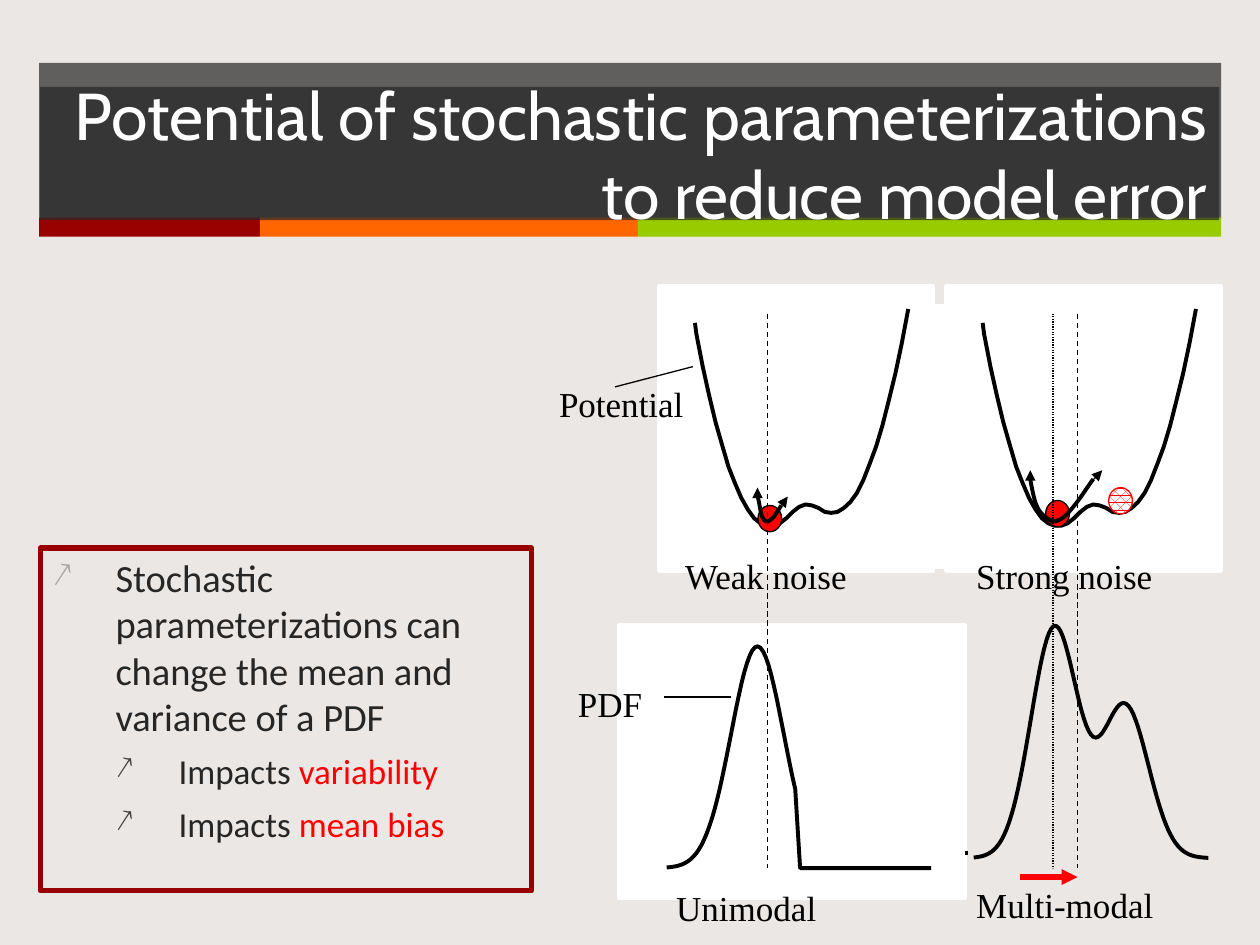
from dataclasses import dataclass
from math import exp

from lxml import etree
from pptx import Presentation
from pptx.dml.color import RGBColor
from pptx.enum.dml import MSO_LINE, MSO_PATTERN
from pptx.enum.shapes import MSO_CONNECTOR, MSO_SHAPE
from pptx.enum.text import MSO_ANCHOR, PP_ALIGN
from pptx.oxml.ns import qn
from pptx.util import Cm, Pt

RECT, OVAL = MSO_SHAPE.RECTANGLE, MSO_SHAPE.OVAL
STRAIGHT = MSO_CONNECTOR.STRAIGHT
DASH, DOTS = MSO_LINE.DASH, MSO_LINE.ROUND_DOT
DOT_FILL = MSO_PATTERN.PERCENT_60
TOP, MIDDLE = MSO_ANCHOR.TOP, MSO_ANCHOR.MIDDLE
LEFT, RIGHT = PP_ALIGN.LEFT, PP_ALIGN.RIGHT


@dataclass(frozen=True)
class Theme:
    paper: str = "EAE7E4"
    dark: str = "262626"
    white: str = "FFFFFF"
    black: str = "000000"
    maroon: str = "990000"
    orange: str = "FF6600"
    green: str = "99CC00"
    red: str = "FF0000"
    bullets: tuple = ("A6A6A6", "404040")
    title_font: str = "Cabin"
    body_font: str = "Calibri"
    label_font: str = "Times New Roman"
    title_size: float = 37.8
    body_sizes: tuple = (22, 20)
    label_size: float = 20
    curve_width: float = 2.25


THEME = Theme()

# Depth in cm below the top of the double-well curve, at equal steps
WELL_DEPTHS = [
    0.51, 1.17, 1.75, 2.29, 2.74, 3.18, 3.51, 3.81, 4.04, 4.22, 4.32, 4.37,
    4.37, 4.32, 4.22, 4.09, 3.99, 3.94, 3.96, 4.01, 4.09, 4.11, 4.09, 4.01,
    3.89, 3.71, 3.45, 3.12, 2.77, 2.34, 1.83, 1.30, 0.69, 0,
]
# Cubic control points and final arrow, in cm from the bottom of the well
WEAK_SWINGS = [
    ([(0, 0), (.03, 0), (.08, -.03), (.13, -.08),
      (.18, -.13), (.28, -.3), (.3, -.33)], [(.3, -.33), (.43, -.51)], .75),
    ([(0, 0), (-.05, -.03), (-.08, -.08), (-.1, -.15),
      (-.13, -.25), (-.15, -.46), (-.18, -.51)], [(-.18, -.51), (-.18, -.69)], 1),
]
STRONG_SWINGS = [
    ([(0, 0), (.08, -.03), (.18, -.05), (.3, -.2),
      (.46, -.36), (.71, -.76), (.79, -.86)], [(.64, -.69), (.97, -1.04)], .75),
    ([(0, 0), (-.13, -.05), (-.25, -.13), (-.33, -.28),
      (-.41, -.43), (-.46, -.76), (-.48, -.86)], [(-.48, -.79), (-.48, -1.04)], 1),
]


def rgb(color):
    return RGBColor.from_string(color)


def add_block(slide, box, fill=None, line=None, width=.75, kind=RECT, alpha=None):
    block = slide.shapes.add_shape(kind, *map(Cm, box))
    block.shadow.inherit = False
    if fill:
        block.fill.solid()
        block.fill.fore_color.rgb = rgb(fill)
    else:
        block.fill.background()
    if alpha:
        color = block._element.spPr.find(".//" + qn("a:srgbClr"))
        etree.SubElement(color, qn("a:alpha")).set("val", str(alpha * 1000))
    if line:
        block.line.color.rgb = rgb(line)
        block.line.width = Pt(width)
    else:
        block.line.fill.background()
    return block


def add_line(slide, start, end, color=THEME.black, width=.75, dash=None, arrow=False):
    line = slide.shapes.add_connector(STRAIGHT, *map(Cm, (*start, *end)))
    line.line.color.rgb = rgb(color)
    line.line.width = Pt(width)
    if dash:
        line.line.dash_style = dash
    if arrow:
        etree.SubElement(line.line._get_or_add_ln(), qn("a:tailEnd")).set("type", "triangle")
    etree.SubElement(line._element.spPr, qn("a:effectLst"))


def add_curve(slide, points):
    corners = [(Cm(x), Cm(y)) for x, y in points]
    builder = slide.shapes.build_freeform(*corners[0], scale=1.0)
    builder.add_line_segments(corners[1:], close=False)
    curve = builder.convert_to_shape()
    curve.shadow.inherit = False
    curve.fill.background()
    curve.line.color.rgb = rgb(THEME.black)
    curve.line.width = Pt(THEME.curve_width)


def style_run(run, font, size, color):
    run.font.name, run.font.size = font, Pt(size)
    run.font.color.rgb = rgb(color)


def add_label(slide, text, x, y, width):
    frame = slide.shapes.add_textbox(Cm(x), Cm(y), Cm(width), Cm(1.12)).text_frame
    frame.word_wrap = True
    frame.text = text
    style_run(frame.paragraphs[0].runs[0], THEME.label_font, THEME.label_size, THEME.black)


def cubic_points(controls, steps=8):
    """Sample a chain of cubic curves that share their end points."""
    points = [controls[0]]
    for first in range(0, len(controls) - 1, 3):
        quad = controls[first:first + 4]
        for step in range(1, steps + 1):
            t = step / steps
            weights = ((1 - t) ** 3, 3 * t * (1 - t) ** 2, 3 * t * t * (1 - t), t ** 3)
            points.append(tuple(sum(w * p[axis] for w, p in zip(weights, quad))
                                for axis in (0, 1)))
    return points


def bell(x, mean, height, spread):
    return height * exp(-((x - mean) / spread) ** 2 / 2)


def title_band(slide, x, y, width):
    add_block(slide, (x, y, width, 3.15), THEME.dark, alpha=70)
    left = x
    for color, part in ((THEME.maroon, 4.45), (THEME.orange, 7.62), (THEME.green, 11.76)):
        add_block(slide, (left, y + 3.12, part, .38), color)
        left += part
    title = add_block(slide, (x + .02, y + .48, width - .06, 2.69), THEME.dark, alpha=70)
    title.text_frame.text = "Potential of stochastic parameterizations to reduce model error"
    title.text_frame.vertical_anchor = MIDDLE
    paragraph = title.text_frame.paragraphs[0]
    paragraph.alignment = RIGHT
    style_run(paragraph.runs[0], THEME.title_font, THEME.title_size, THEME.white)


def set_bullet(paragraph, level):
    props = paragraph._p.get_or_add_pPr()
    props.set("marL", str(Cm(1.27 * (level + 1))))
    props.set("indent", str(Cm(-1.27)))
    color = etree.SubElement(props, qn("a:buClr"))
    etree.SubElement(color, qn("a:srgbClr")).set("val", THEME.bullets[level])
    etree.SubElement(props, qn("a:buSzPct")).set("val", "90000")
    etree.SubElement(props, qn("a:buChar")).set("char", "↗")


def message_box(slide, box):
    frame = add_block(slide, box, line=THEME.maroon, width=3).text_frame
    frame.vertical_anchor = TOP
    messages = [
        (0, "Stochastic parameterizations can change the mean and variance of a PDF", ""),
        (1, "Impacts ", "variability"),
        (1, "Impacts ", "mean bias"),
    ]
    for index, (level, plain, stressed) in enumerate(messages):
        paragraph = frame.add_paragraph() if index else frame.paragraphs[0]
        paragraph.level, paragraph.alignment = level, LEFT
        paragraph.space_before = Pt(6 * level)
        set_bullet(paragraph, level)
        for text, color in ((plain, THEME.dark), (stressed, THEME.red)):
            if text:
                run = paragraph.add_run()
                run.text = text
                style_run(run, THEME.body_font, THEME.body_sizes[level], color)


def well_panel(slide, x, y, ball_y, swings):
    add_block(slide, (x, y, 5.54, 5.74), THEME.white, THEME.white, 2.25)
    left, top = x + .76, y + .46
    step = 4.27 / (len(WELL_DEPTHS) - 1)
    add_curve(slide, [(left - .03, top + .28)] + [
        (left + i * step, top + depth) for i, depth in enumerate(WELL_DEPTHS)])
    add_block(slide, (x + 2, y + ball_y, .48, .53), THEME.red, THEME.black, kind=OVAL)
    for controls, arrow, width in swings:
        path, tip = ([(x + 2.17 + dx, y + 4.75 + dy) for dx, dy in points]
                     for points in (cubic_points(controls), arrow))
        add_curve(slide, path)
        add_line(slide, *tip, width=width, arrow=True)


def unimodal_panel(slide, x, y):
    add_block(slide, (x, y, 6.99, 5.51), THEME.white, THEME.white, 2.25)
    base, cut = y + 4.9, 3.61
    rise = [.97 + i * .054 for i in range(49)]
    add_curve(slide, [(x + dx, base - bell(dx, 2.8, 4.47, .53)) for dx in rise]
              + [(x + cut + .05, base), (x + 6.3, base)])


def multimodal_curve(slide, x, base):
    offsets = [i * .0473 for i in range(101)]
    add_curve(slide, [(x + dx, base - bell(dx, 1.63, 4.65, .475) - bell(dx, 3.05, 3.07, .475))
                      for dx in offsets])
    add_line(slide, (x - .17, base - .1), (x - .12, base - .1), width=2.25)


def noise_diagram(slide, x, y):
    """Wells above, their densities below, guides through both."""
    add_block(slide, (x + 1.3, y + .4, 5.23, 5.26), THEME.white, THEME.white, 2.25)
    well_panel(slide, x, y, 4.42, WEAK_SWINGS)
    well_panel(slide, x + 5.8, y, 4.32, STRONG_SWINGS)
    ghost = add_block(slide, (x + 9.07, y + 4.06, .48, .53), line=THEME.red, kind=OVAL)
    ghost.fill.patterned()
    ghost.fill.pattern = DOT_FILL
    ghost.fill.fore_color.rgb = rgb(THEME.red)
    ghost.fill.back_color.rgb = rgb(THEME.white)
    unimodal_panel(slide, x - .81, y + 6.83)
    multimodal_curve(slide, x + 6.35, y + 11.53)
    for dx, dash in ((2.19, DASH), (8.44, DASH), (7.95, DOTS)):
        add_line(slide, (x + dx, y + .55), (x + dx, y + 11.73), dash=dash)
    add_line(slide, (x + 7.29, y + 11.91), (x + 8.44, y + 11.91), THEME.red, 3, arrow=True)
    for text, dx, dy, width in (
        ("Weak noise", .28, 5.28, 5.44), ("Strong noise", 6.15, 5.28, 5.18),
        ("Unimodal", .1, 11.98, 3.76), ("Multi-modal", 6.15, 11.91, 4.72),
        ("Potential", -2.26, 1.82, 3.12), ("PDF", -1.88, 7.87, 3.12),
    ):
        add_label(slide, text, x + dx, y + dy, width)
    add_line(slide, (x - .88, y + 2.03), (x + .69, y + 1.62))
    add_line(slide, (x + .1, y + 8.28), (x + 1.45, y + 8.28))


def main():
    deck = Presentation()
    deck.slide_width, deck.slide_height = Cm(25.4), Cm(19.05)
    slide = deck.slides.add_slide(deck.slide_layouts[6])
    slide.background.fill.solid()
    slide.background.fill.fore_color.rgb = rgb(THEME.paper)
    title_band(slide, .79, 1.27, 23.83)
    noise_diagram(slide, 13.28, 5.77)
    message_box(slide, (.81, 11.05, 9.91, 6.91))
    deck.save("out.pptx")


if __name__ == "__main__":
    main()
